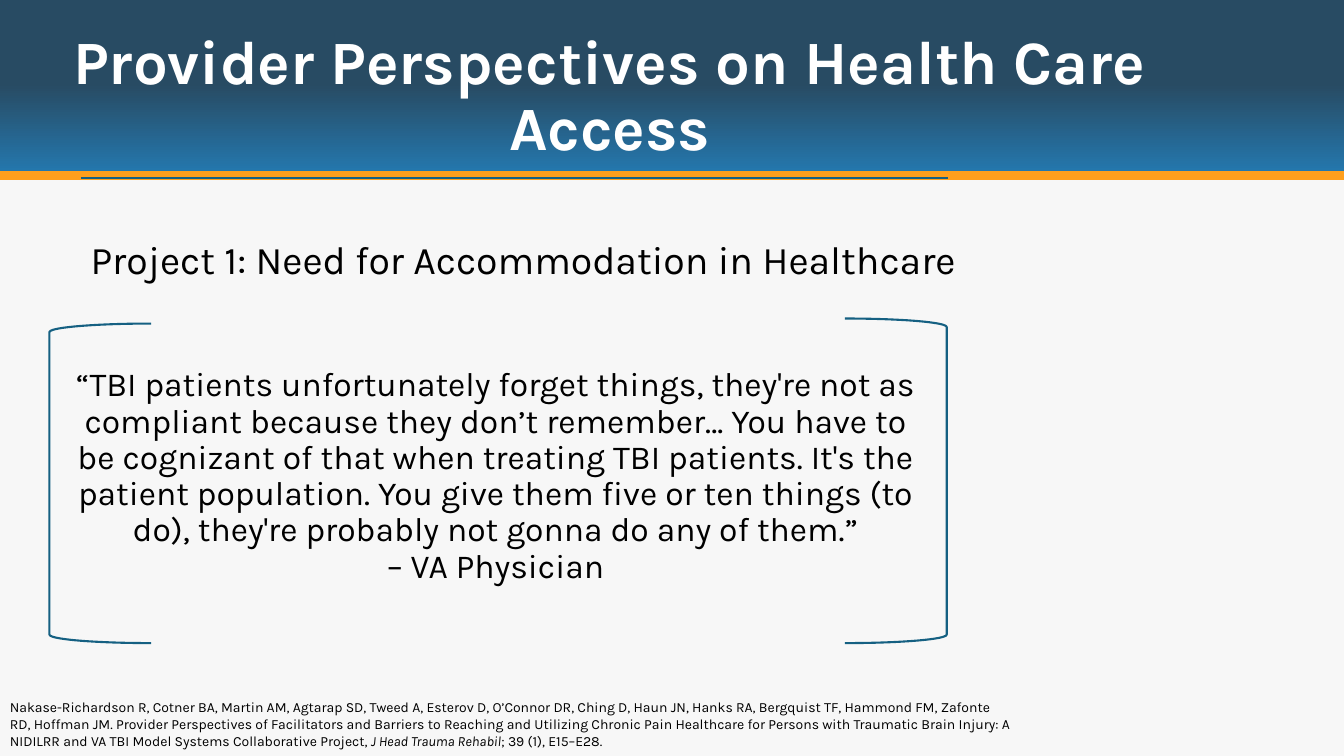
from lxml.etree import SubElement
from pptx import Presentation
from pptx.dml.color import RGBColor
from pptx.enum.shapes import MSO_CONNECTOR, MSO_SHAPE
from pptx.enum.text import MSO_ANCHOR, PP_ALIGN
from pptx.oxml.ns import qn
from pptx.util import Inches, Pt

THEME = {
    "font": "Karla",
    "background": "F7F7F7",
    "banner": [(0.48, "284B63"), (1, "2479B0")],
    "accent": "FF9F1C",
    "outline": "156082",
    "title": "FFFFFF",
    "text": "000000",
    "title_size": 44,
    "heading_size": 28,
    "quote_size": 24,
    "citation_size": 10,
}
PAGE_WIDTH, PAGE_HEIGHT = 13.33, 7.5
BANNER_HEIGHT = 1.74

TITLE = "Provider Perspectives on Health Care Access"
HEADING = "Project 1: Need for Accommodation in Healthcare"
QUOTE = (
    "“TBI patients unfortunately forget things, they're not as compliant because "
    "they don’t remember… You have to be cognizant of that when treating TBI "
    "patients. It's the patient population. You give them five or ten things (to "
    "do), they're probably not gonna do any of them.”\v– VA Physician"
)
CITATION = [
    ("Nakase-Richardson R, Cotner BA, Martin AM, Agtarap SD, Tweed A, Esterov D, "
     "O’Connor DR, Ching D, Haun JN, Hanks RA, Bergquist TF, Hammond FM, Zafonte RD, "
     "Hoffman JM. Provider Perspectives of Facilitators and Barriers to Reaching and "
     "Utilizing Chronic Pain Healthcare for Persons with Traumatic Brain Injury: A "
     "NIDILRR and VA TBI Model Systems Collaborative Project, ", False),
    ("J Head Trauma Rehabil", True),
    ("; 39 (1), E15–E28.", False),
]

TEXTS = [
    {"at": (0.3, 0.24, 11.5, 1.45), "spans": [(TITLE, False)], "role": "title",
     "anchor": MSO_ANCHOR.MIDDLE, "bold": True,
     "format": {"alignment": PP_ALIGN.CENTER, "line_spacing": 0.9}},
    {"at": (0.8, 2.34, 9.74, 0.6), "spans": [(HEADING, False)], "role": "heading",
     "format": {"line_spacing": 0.9}},
    {"at": (0.55, 3.6, 8.73, 2.83), "spans": [(QUOTE, False)], "role": "quote",
     "format": {"alignment": PP_ALIGN.CENTER, "line_spacing": 0.9}},
    {"at": (0, 6.88, 10.14, 0.61), "spans": CITATION, "role": "citation",
     "format": {}},
]
BRACKETS = [((8.38, 3.16, 1.01, 3.22), 0), ((0.49, 3.21, 1.01, 3.17), 180)]
RULES = [
    (0, PAGE_WIDTH, BANNER_HEIGHT, "accent", 6),
    (0.8, 9.4, 1.77, "outline", 1.5),
]


def color(value):
    return RGBColor.from_string(value)


def add_banner(page):
    banner = page.shapes.add_shape(
        MSO_SHAPE.RECTANGLE, 0, 0, Inches(PAGE_WIDTH), Inches(BANNER_HEIGHT))
    banner.shadow.inherit = False
    banner.line.fill.background()
    banner.fill.gradient()
    banner.fill.gradient_angle = 270
    for stop, (position, value) in zip(banner.fill.gradient_stops, THEME["banner"]):
        stop.position = position
        stop.color.rgb = color(value)


def add_rule(page, left, right, top, role, width):
    rule = page.shapes.add_connector(
        MSO_CONNECTOR.STRAIGHT, *map(Inches, (left, top, right, top)))
    rule.line.color.rgb = color(THEME[role])
    rule.line.width = Pt(width)
    SubElement(rule._element.spPr, qn("a:effectLst"))


def add_bracket(page, at, rotation):
    bracket = page.shapes.add_shape(MSO_SHAPE.RIGHT_BRACKET, *map(Inches, at))
    bracket.shadow.inherit = False
    bracket.rotation = rotation
    bracket.fill.background()
    bracket.line.color.rgb = color(THEME["outline"])
    bracket.line.width = Pt(1.5)


def add_text(page, item):
    frame = page.shapes.add_textbox(*map(Inches, item["at"])).text_frame
    frame.word_wrap = True
    frame.vertical_anchor = item.get("anchor", MSO_ANCHOR.TOP)
    para = frame.paragraphs[0]
    for name, value in item["format"].items():
        setattr(para, name, value)
    for index, line in enumerate(item["spans"]):
        words, italic = line
        for part_index, part in enumerate(words.split("\v")):
            if part_index:
                para.add_line_break()
            span = para.add_run()
            span.text = part
            font_format = {
                "name": THEME["font"],
                "size": Pt(THEME[item["role"] + "_size"]),
                "bold": item.get("bold", False),
                "italic": italic,
            }
            for name, value in font_format.items():
                setattr(span.font, name, value)
            span.font.color.rgb = color(THEME.get(item["role"], THEME["text"]))


def main():
    deck = Presentation()
    deck.slide_width, deck.slide_height = Inches(PAGE_WIDTH), Inches(PAGE_HEIGHT)
    page = deck.slides.add_slide(deck.slide_layouts[6])
    page.background.fill.solid()
    page.background.fill.fore_color.rgb = color(THEME["background"])
    add_banner(page)
    for rule in RULES:
        add_rule(page, *rule)
    for item in TEXTS:
        add_text(page, item)
    for bracket in BRACKETS:
        add_bracket(page, *bracket)
    deck.save("out.pptx")


if __name__ == "__main__":
    main()
